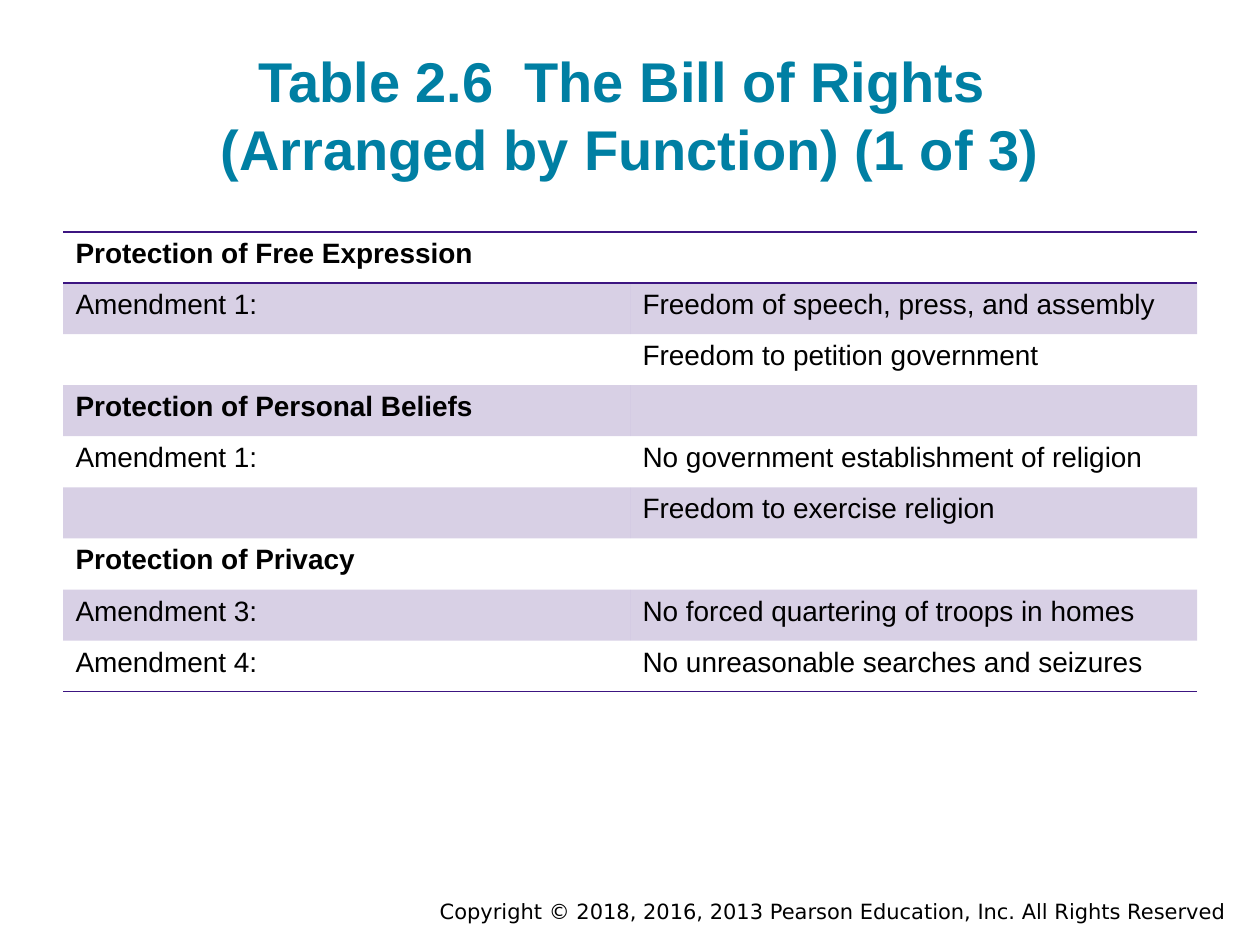
from dataclasses import dataclass

from lxml.etree import SubElement
from pptx import Presentation
from pptx.dml.color import RGBColor
from pptx.enum.text import MSO_ANCHOR as Anchor, MSO_AUTO_SIZE as AutoSize, PP_ALIGN as Align
from pptx.oxml.ns import qn
from pptx.util import Inches, Pt


@dataclass(frozen=True)
class Theme:
    heading: str = "007FA3"
    accent: str = "3C1581"
    ink: str = "000000"
    band_opacity: int = 20
    font: str = "Arial"
    footer_font: str = "DejaVu Sans"
    title_size: int = 32
    table_size: int = 16
    footer_size: int = 12


def write(paragraph, text, *, font, size, color, bold=False, align=Align.LEFT):
    paragraph.alignment = align
    for index, line in enumerate(text.split("\n")):
        if index:
            paragraph.add_line_break()
        run = paragraph.add_run()
        run.text = line
        run.font.name = font
        run.font.size = Pt(size)
        run.font.bold = bold
        run.font.color.rgb = RGBColor.from_string(color)


class SlideBuilder:
    def __init__(self, slide, theme):
        self.slide = slide
        self.theme = theme

    def title(self, text, left, top, width, height):
        heading = self.slide.shapes.title
        heading.left, heading.top = Inches(left), Inches(top)
        heading.width, heading.height = Inches(width), Inches(height)
        frame = heading.text_frame
        frame.auto_size = AutoSize.NONE
        frame.word_wrap = True
        frame.vertical_anchor = Anchor.BOTTOM
        frame.margin_left = frame.margin_right = Inches(0.1)
        frame.margin_top = frame.margin_bottom = Inches(0.1)
        write(frame.paragraphs[0], text, font=self.theme.font, size=self.theme.title_size,
              color=self.theme.heading, bold=True, align=Align.CENTER)

    def footer(self, text, left, top, width, height):
        box = self.slide.shapes.add_textbox(
            Inches(left), Inches(top), Inches(width), Inches(height))
        box.text_frame.word_wrap = True
        write(box.text_frame.paragraphs[0], text, font=self.theme.footer_font,
              size=self.theme.footer_size, color=self.theme.ink, align=Align.RIGHT)

    def table(self, rows, left, top, width, height):
        frame = self.slide.shapes.add_table(
            len(rows), 2, Inches(left), Inches(top), Inches(width), Inches(height))
        grid = frame.table
        grid.horz_banding = False
        style_id = frame._element.find(".//" + qn("a:tableStyleId"))
        style_id.text = "{2D5ABB26-0587-4C30-8999-92F81FD0307C}"
        last = len(rows) - 1
        for row_index, texts in enumerate(rows):
            edges = {0: ("a:lnT", "a:lnB"), last: ("a:lnB",)}.get(row_index, ())
            is_section = texts[0].startswith("Protection")
            for column, text in enumerate(texts):
                cell = grid.cell(row_index, column)
                for edge in edges:
                    self.border(cell, edge)
                self.band(cell, shaded=row_index % 2 == 1)
                if text:
                    write(cell.text_frame.paragraphs[0], text, font=self.theme.font,
                          size=self.theme.table_size, color=self.theme.ink, bold=is_section)

    def border(self, cell, edge):
        line = SubElement(cell._tc.get_or_add_tcPr(), qn(edge), w=str(Pt(1)))
        fill = SubElement(line, qn("a:solidFill"))
        SubElement(fill, qn("a:srgbClr"), val=self.theme.accent)

    def band(self, cell, shaded):
        if not shaded:
            cell.fill.background()
            return
        cell.fill.solid()
        cell.fill.fore_color.rgb = RGBColor.from_string(self.theme.accent)
        color = cell._tc.tcPr.find(qn("a:solidFill")).find(qn("a:srgbClr"))
        SubElement(color, qn("a:alpha"), val=str(self.theme.band_opacity * 1000))


RIGHTS = [
    ("Protection of Free Expression", ""),
    ("Amendment 1:", "Freedom of speech, press, and assembly"),
    ("", "Freedom to petition government"),
    ("Protection of Personal Beliefs", ""),
    ("Amendment 1:", "No government establishment of religion"),
    ("", "Freedom to exercise religion"),
    ("Protection of Privacy", ""),
    ("Amendment 3:", "No forced quartering of troops in homes"),
    ("Amendment 4:", "No unreasonable searches and seizures"),
]


def main():
    deck = Presentation()
    deck.slide_width, deck.slide_height = Inches(10), Inches(7.5)
    builder = SlideBuilder(deck.slides.add_slide(deck.slide_layouts[5]), Theme())
    builder.footer("Copyright © 2018, 2016, 2013 Pearson Education, Inc. All Rights Reserved",
                   2, 7.08, 7.83, 0.3)
    builder.title("Table 2.6  The Bill of Rights \n(Arranged by Function) (1 of 3)",
                  0.5, 0.24, 9, 1.3)
    builder.table(RIGHTS, 0.5, 1.84, 9, 3.65)
    deck.save("out.pptx")


if __name__ == "__main__":
    main()
